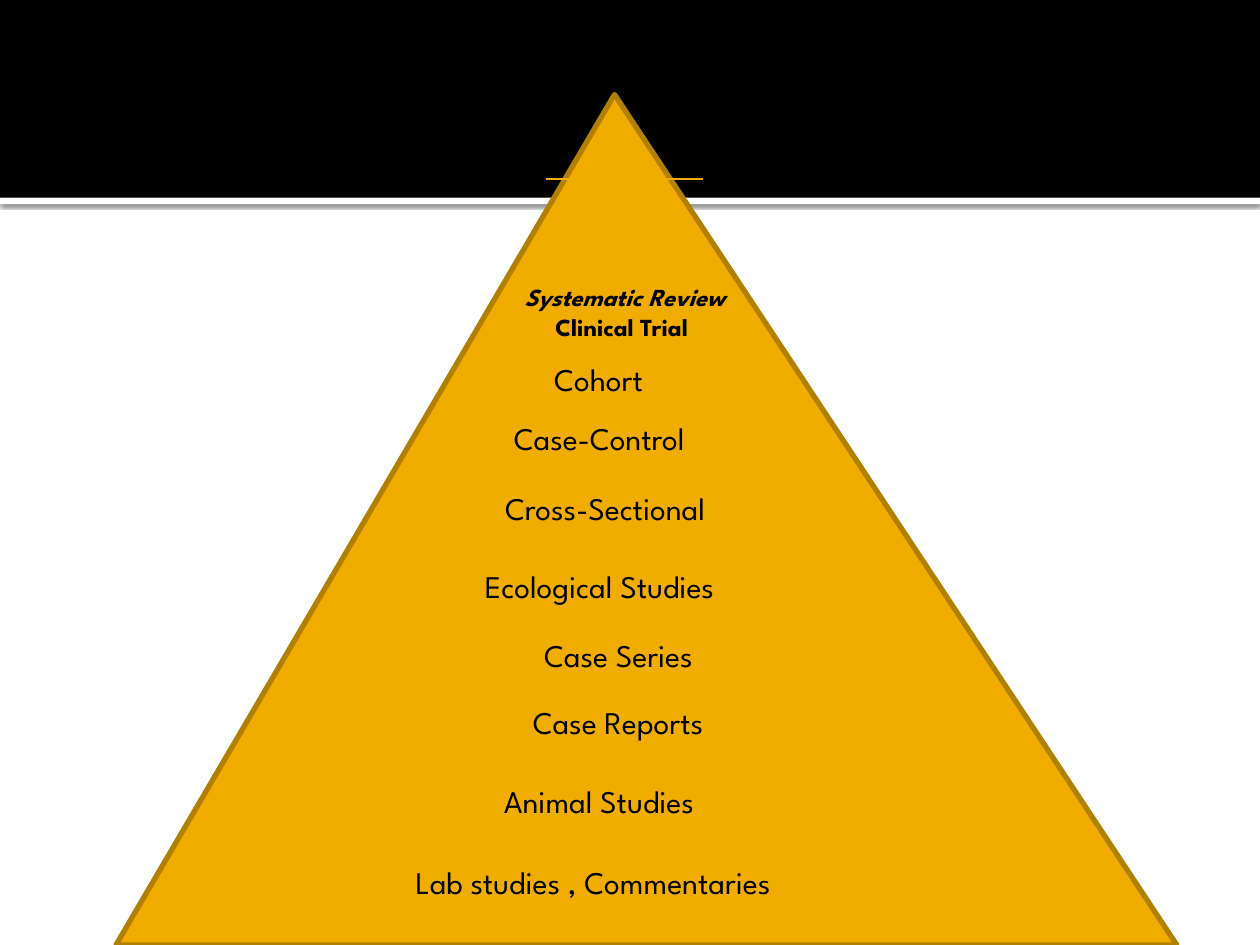
from lxml import etree
from pptx import Presentation
from pptx.dml.color import RGBColor as Rgb
from pptx.enum.shapes import MSO_CONNECTOR as Link, MSO_SHAPE as Kind
from pptx.enum.text import MSO_AUTO_SIZE as Fit, PP_ALIGN as Align
from pptx.oxml import parse_xml
from pptx.util import Inches, Pt

THEME = {
    "font": "League Spartan",
    "ink": Rgb.from_string("000000"),
    "paper": Rgb.from_string("FFFFFF"),
    "gold": Rgb.from_string("F0AD00"),
    "edge": Rgb.from_string("B28000"),
    "top": 14,
    "level": 18,
}

TOP = [("Systematic Review", True), ("Clinical Trial ", False)]
LEVELS = [
    ("Cohort", 4.3, 2.81, 1.31),
    ("Case-Control", 3.98, 3.28, 2.11),
    ("Cross-Sectional", 3.91, 3.83, 2.45),
    ("Ecological Studies", 3.75, 4.45, 2.54),
    ("Case Series", 4.22, 5, 2.09),
    ("Case Reports", 4.13, 5.53, 2.51),
    ("Animal Studies", 3.9, 6.16, 2.58),
    ("Lab studies , Commentaries", 3.2, 6.8, 4),
]

WIDE, HIGH, BAND = 10, 7.5, 1.57
NS = "http://schemas.openxmlformats.org/drawingml/2006/main"
SHADOW = (
    f'<a:effectLst xmlns:a="{NS}">'
    '<a:outerShdw blurRad="31750" dist="10160" dir="5400000" rotWithShape="0">'
    '<a:srgbClr val="000000"><a:alpha val="60000"/></a:srgbClr>'
    "</a:outerShdw></a:effectLst>"
)


def add_block(slide, kind, box, fill):
    shape = slide.shapes.add_shape(kind, *map(Inches, box))
    shape.shadow.inherit = False
    shape.fill.solid()
    shape.fill.fore_color.rgb = fill
    shape.line.fill.background()
    return shape


def add_text(slide, box, lines, size, bold=False, align=Align.LEFT):
    frame = slide.shapes.add_textbox(*map(Inches, box)).text_frame
    frame.word_wrap = True
    frame.auto_size = Fit.SHAPE_TO_FIT_TEXT
    for i, (text, slant) in enumerate(lines):
        para = frame.add_paragraph() if i else frame.paragraphs[0]
        para.text = text
        para.alignment = align
        font = para.font
        font.name, font.size = THEME["font"], Pt(size)
        font.bold, font.italic = bold, slant
        font.color.rgb = THEME["ink"]


def main():
    deck = Presentation()
    deck.slide_width, deck.slide_height = Inches(WIDE), Inches(HIGH)
    slide = deck.slides.add_slide(deck.slide_layouts[6])

    strip = add_block(slide, Kind.RECTANGLE, (0, BAND, WIDE, 0.05), THEME["paper"])
    props = strip.fill._xPr
    props.replace(props.find(f"{{{NS}}}effectLst"), parse_xml(SHADOW))
    add_block(slide, Kind.RECTANGLE, (0, 0, WIDE, BAND), THEME["ink"])

    peak = add_block(
        slide, Kind.ISOSCELES_TRIANGLE, (0.92, 0.75, 8.42, 6.75), THEME["gold"]
    )
    peak.adjustments[0] = 0.47
    peak.line.color.rgb = THEME["edge"]
    peak.line.width = Pt(3)

    rule = slide.shapes.add_connector(
        Link.STRAIGHT, *map(Inches, (4.33, 1.42, 5.58, 1.42))
    )
    rule.line.color.rgb = THEME["gold"]
    rule.line.width = Pt(1)
    etree.SubElement(rule._element.spPr, f"{{{NS}}}effectLst")

    add_text(slide, (3.67, 2.19, 2.58, 0.57), TOP, THEME["top"], True, Align.CENTER)
    for text, left, top, width in LEVELS:
        add_text(slide, (left, top, width, 0.4), [(text, False)], THEME["level"])

    deck.save("out.pptx")


if __name__ == "__main__":
    main()
